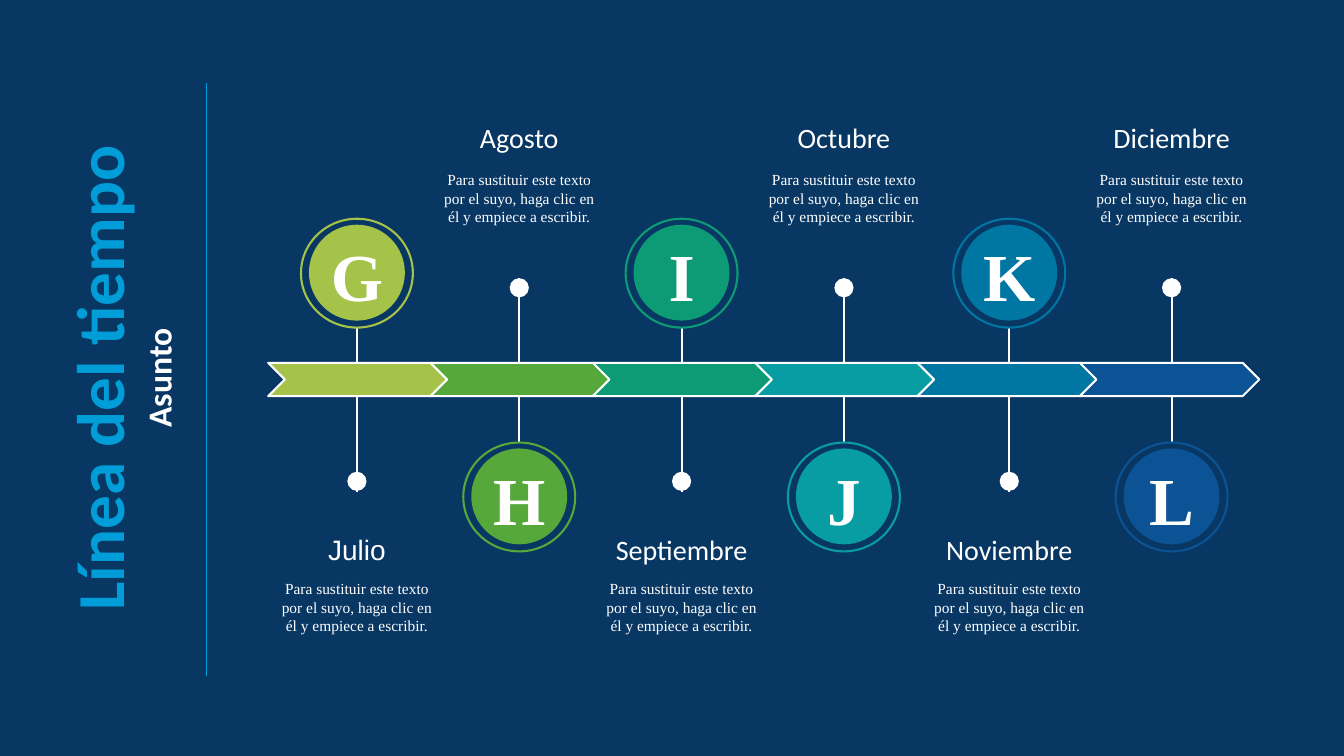
import pptx
import pptx.dml.color
import pptx.enum.shapes
import pptx.enum.text
import pptx.oxml.ns
import pptx.util
from lxml import etree

TITLE, SUBJECT = "Línea del tiempo", "Asunto"
DESCRIPTION = "Para sustituir este texto por el suyo, haga clic en él y empiece a escribir."
MONTHS = [
    # letter, month, colour, font of the month
    ("G", "Julio", "A5C249", "Arial"),
    ("H", "Agosto", "55A839", "Calibri"),
    ("I", "Septiembre", "0C9B74", "Calibri"),
    ("J", "Octubre", "089CA3", "Calibri"),
    ("K", "Noviembre", "0076A3", "Calibri"),
    ("L", "Diciembre", "0B5394", "Calibri"),
]
NAVY, SKY, WHITE = "083763", "009DD9", "FFFFFF"
SERIF = "Times New Roman"

WIDTH, HEIGHT = 13.33, 7.5
FIRST_CENTER, PITCH = 3.54, 1.61
LATE_SHIFT = 0.03  # the last two months sit slightly further right
CHEVRON_LEFT, CHEVRON_TOP = 2.66, 3.6
LABEL_WIDTH, CHEVRON_HEIGHT = 1.78, 0.33
RING_WIDTH, RING_HEIGHT, DISC, DOT = 1.11, 1.08, 0.93, 0.19

# Tops of each part, for months with the medal above and below the arrow
MEDAL_ABOVE = dict(ring=2.17, line=(3.25, 4.88), dot=4.68, month=5.23, text=5.7)
MEDAL_BELOW = dict(ring=4.39, line=(2.76, 4.39), dot=2.76, month=1.15, text=1.64)

SHAPES = pptx.enum.shapes.MSO_SHAPE
inch = pptx.util.Inches

deck = pptx.Presentation()
deck.slide_width, deck.slide_height = inch(WIDTH), inch(HEIGHT)
page = deck.slides.add_slide(deck.slide_layouts[6])


def color(hex_code):
    return pptx.dml.color.RGBColor.from_string(hex_code)


def add_text(text, center, top, width, height, size, font="Calibri",
             ink=WHITE, bold=False, rotation=0):
    box = page.shapes.add_textbox(
        inch(center - width / 2), inch(top), inch(width), inch(height))
    box.rotation = rotation
    box.text_frame.word_wrap = True
    para = box.text_frame.paragraphs[0]
    para.alignment = pptx.enum.text.PP_ALIGN.CENTER
    span = para.add_run()
    span.text = text
    span.font.size, span.font.name, span.font.bold = pptx.util.Pt(size), font, bold
    span.font.color.rgb = color(ink)


def add_figure(kind, center, top, width, height, fill=None, line=None):
    figure = page.shapes.add_shape(
        kind, inch(center - width / 2), inch(top), inch(width), inch(height))
    figure.shadow.inherit = False
    if fill:
        figure.fill.solid()
        figure.fill.fore_color.rgb = color(fill)
    else:
        figure.fill.background()
    if line:
        figure.line.color.rgb = color(line)
        figure.line.width = pptx.util.Pt(1.5)
    else:
        figure.line.fill.background()


def add_vertical_line(x, top, bottom, ink, weight):
    line = page.shapes.add_connector(
        pptx.enum.shapes.MSO_CONNECTOR.STRAIGHT,
        inch(x), inch(top), inch(x), inch(bottom))
    line.line.color.rgb = color(ink)
    line.line.width = pptx.util.Pt(weight)
    etree.SubElement(line._element.spPr, pptx.oxml.ns.qn("a:effectLst"))


page.background.fill.solid()
page.background.fill.fore_color.rgb = color(NAVY)

add_text(TITLE, 0.97, 3.3, HEIGHT, 0.9, 48, ink=SKY, bold=True, rotation=270)
add_text(SUBJECT, 1.57, 3.5, HEIGHT, 0.5, 24, bold=True, rotation=270)
add_vertical_line(2.05, 0.82, 6.71, SKY, 1)

for index, (letter, month, shade, month_font) in enumerate(MONTHS):
    center = FIRST_CENTER + index * PITCH + (LATE_SHIFT if index >= 4 else 0)
    tops = MEDAL_BELOW if index % 2 else MEDAL_ABOVE
    ring = tops["ring"]
    add_vertical_line(center, *tops["line"], WHITE, 1.5)
    add_figure(SHAPES.OVAL, center, ring, RING_WIDTH, RING_HEIGHT, line=shade)
    add_figure(SHAPES.OVAL, center, ring + 0.07, DISC, DISC, shade, shade)
    add_text(letter, center, ring + 0.11, 0.94, 0.9, 48, SERIF, bold=True)
    add_figure(SHAPES.FLOWCHART_CONNECTOR, center, tops["dot"], DOT, DOT, WHITE)
    add_text(month, center, tops["month"], LABEL_WIDTH, 0.43, 20, month_font)
    add_text(DESCRIPTION, center, tops["text"], LABEL_WIDTH, 0.83, 11, SERIF)
    chevron_center = CHEVRON_LEFT + LABEL_WIDTH / 2 + index * PITCH
    add_figure(SHAPES.CHEVRON, chevron_center, CHEVRON_TOP,
               LABEL_WIDTH, CHEVRON_HEIGHT, shade, WHITE)

deck.save("out.pptx")
